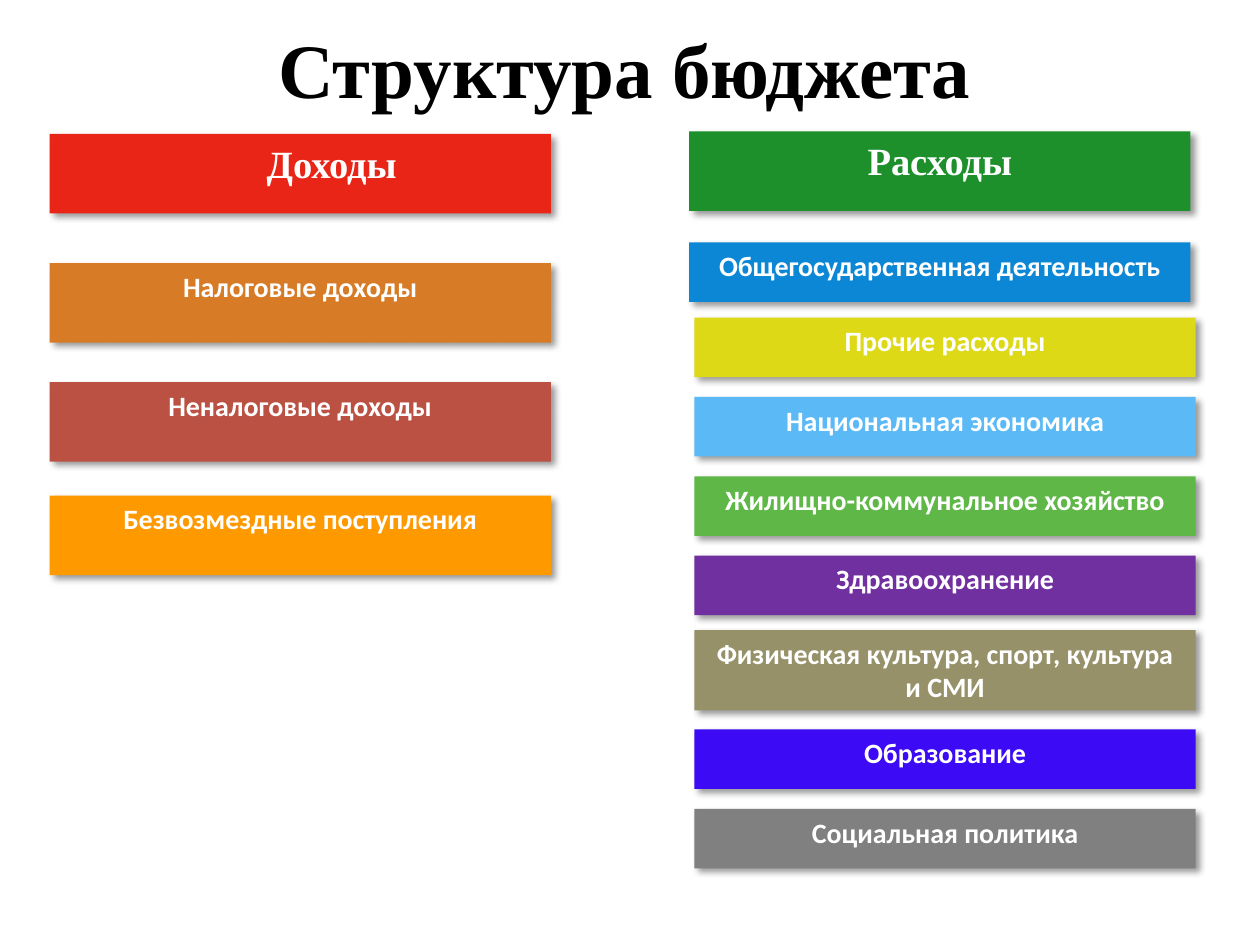
import pptx
import pptx.util
import pptx.dml.color
import pptx.enum.shapes
import pptx.enum.text
import pptx.oxml.ns
import lxml.etree
from dataclasses import dataclass

Pt = pptx.util.Pt
Rgb = pptx.dml.color.RGBColor.from_string
qn = pptx.oxml.ns.qn


@dataclass(frozen=True)
class Theme:
    serif: str = "Times New Roman"
    sans: str = "Calibri"
    title: int = 44
    head: int = 22
    item: int = 16
    dark: str = "000000"
    light: str = "FFFFFF"
    red: str = "E82516"
    green: str = "1D8F2B"
    rust: str = "D87B26"
    brick: str = "BB5143"
    amber: str = "FF9900"
    blue: str = "0B87D6"
    yellow: str = "DED917"
    sky: str = "5BBAF6"
    leaf: str = "5FB747"
    purple: str = "7030A0"
    khaki: str = "969168"
    indigo: str = "3C0AF4"
    gray: str = "808080"


THEME = Theme()
WIDTH = 286.5
TALL = 45.5
LOW = 34
LEFT = 28.3
RIGHT = 396.8
HEAD = 393.8


def write(frame, text, font, size, color):
    line = frame.paragraphs[0]
    line.alignment = pptx.enum.text.PP_ALIGN.CENTER
    run = line.add_run()
    run.text = text
    run.font.name = font
    run.font.size = Pt(size)
    run.font.bold = True
    run.font.color.rgb = Rgb(color)
    return line


def shade(box):
    box.shadow.inherit = False
    effects = box._element.spPr.find(qn("a:effectLst"))
    outer = lxml.etree.SubElement(
        effects, qn("a:outerShdw"), blurRad=str(Pt(4)), dist=str(Pt(3)),
        dir=str(40 * 60000), algn="tl", rotWithShape="0")
    color = lxml.etree.SubElement(outer, qn("a:srgbClr"), val=THEME.dark)
    lxml.etree.SubElement(color, qn("a:alpha"), val="40000")


def add_bar(slide, text, fill, left, top, height, font, size):
    box = slide.shapes.add_shape(
        pptx.enum.shapes.MSO_SHAPE.RECTANGLE,
        Pt(left), Pt(top), Pt(WIDTH), Pt(height))
    box.fill.solid()
    box.fill.fore_color.rgb = Rgb(fill)
    box.line.fill.background()
    shade(box)
    frame = box.text_frame
    frame.word_wrap = True
    frame.vertical_anchor = pptx.enum.text.MSO_ANCHOR.TOP
    return write(frame, text, font, size, THEME.light)


def add_head(slide, text, fill, left, top):
    return add_bar(slide, text, fill, left, top, TALL, THEME.serif, THEME.head)


def add_item(slide, text, fill, left, top, height):
    add_bar(slide, text, fill, left, top, height, THEME.sans, THEME.item)


def add_title(slide, text):
    title = slide.shapes.title
    title.left, title.top = Pt(33), Pt(0)
    title.width, title.height = Pt(648), Pt(77)
    frame = title.text_frame
    frame.vertical_anchor = pptx.enum.text.MSO_ANCHOR.MIDDLE
    write(frame, text, THEME.serif, THEME.title, THEME.dark)


def main():
    deck = pptx.Presentation()
    deck.slide_width, deck.slide_height = Pt(720), Pt(540)
    slide = deck.slides.add_slide(deck.slide_layouts[5])
    add_title(slide, "Структура бюджета")

    income = add_head(slide, "Доходы", THEME.red, LEFT, 76.5)
    income._p.get_or_add_pPr().set("marL", str(Pt(36)))
    add_head(slide, "Расходы", THEME.green, HEAD, 75)

    items = [
        ("Налоговые доходы", THEME.rust, LEFT, 150.3, TALL),
        ("Неналоговые доходы", THEME.brick, LEFT, 218.3, TALL),
        ("Безвозмездные поступления", THEME.amber, LEFT, 283.2, TALL),
        ("Общегосударственная деятельность", THEME.blue, HEAD, 138.5, LOW),
        ("Прочие расходы", THEME.yellow, RIGHT, 181.5, LOW),
        ("Национальная экономика", THEME.sky, RIGHT, 226.8, LOW),
        ("Жилищно-коммунальное хозяйство", THEME.leaf, RIGHT, 272.2, LOW),
        ("Здравоохранение", THEME.purple, RIGHT, 317.5, LOW),
        ("Физическая культура, спорт, культура и СМИ", THEME.khaki,
         RIGHT, 360, 46),
        ("Образование", THEME.indigo, RIGHT, 416.8, LOW),
        ("Социальная политика", THEME.gray, RIGHT, 462.2, LOW),
    ]
    for item in items:
        add_item(slide, *item)
    deck.save("out.pptx")


if __name__ == "__main__":
    main()
